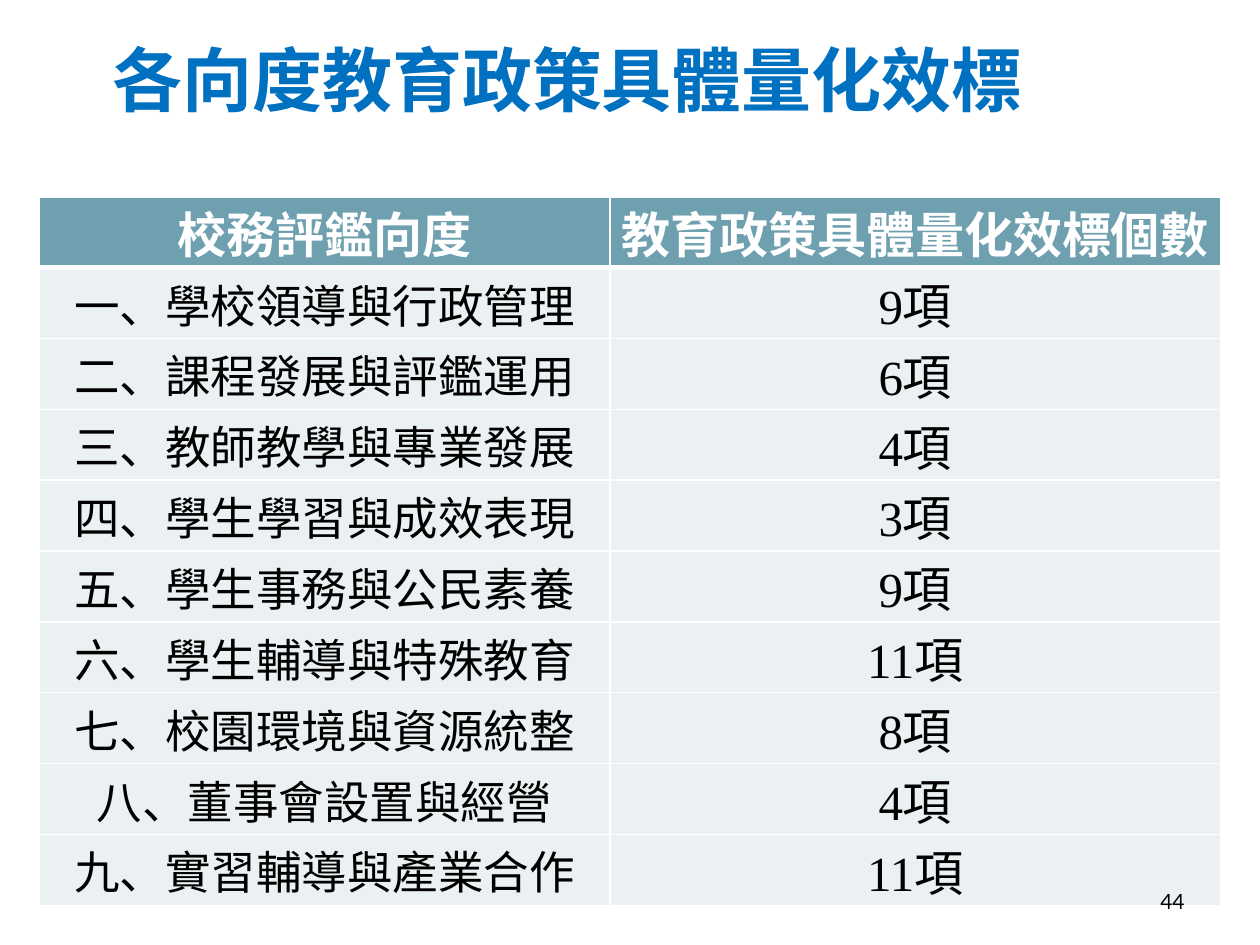
from typing import NamedTuple

from lxml.etree import fromstring
from pptx import Presentation
from pptx.dml.color import RGBColor
from pptx.enum.text import MSO_ANCHOR, PP_ALIGN
from pptx.util import Pt

NS = "http://schemas.openxmlformats.org/drawingml/2006/main"
SERIF = "Times New Roman"


class Style(NamedTuple):
    size: float
    color: str
    bold: bool = False
    font: str = SERIF
    align: PP_ALIGN = PP_ALIGN.CENTER


class Row(NamedTuple):
    name: str
    count: str


HEAD = Row("校務評鑑向度", "教育政策具體量化效標個數")
ROWS = [
    Row("一、學校領導與行政管理", "9項"),
    Row("二、課程發展與評鑑運用", "6項"),
    Row("三、教師教學與專業發展", "4項"),
    Row("四、學生學習與成效表現", "3項"),
    Row("五、學生事務與公民素養", "9項"),
    Row("六、學生輔導與特殊教育", "11項"),
    Row("七、校園環境與資源統整", "8項"),
    Row("八、董事會設置與經營", "4項"),
    Row("九、實習輔導與產業合作", "11項"),
]
HEAD_STYLE = Style(28, "FFFFFF", True)
BODY_STYLES = (Style(26, "000000"), Style(28, "000000"))


def paint(target, color: str) -> None:
    target.rgb = RGBColor.from_string(color)


def write(frame, text: str, style: Style) -> None:
    frame.text = text
    para = frame.paragraphs[0]
    para.alignment = style.align
    font = para.runs[0].font
    font.size, font.bold, font.name = Pt(style.size), style.bold, style.font
    paint(font.color, style.color)


def edge(cell, top: float, bottom: float) -> None:
    """Give a cell white borders; the sides are 1 pt wide."""
    props = cell._tc.get_or_add_tcPr()
    sides = {"L": 1, "R": 1, "T": top, "B": bottom}
    for spot, (side, width) in enumerate(sides.items()):
        props.insert(spot, fromstring(
            f'<a:ln{side} xmlns:a="{NS}" w="{Pt(width)}"><a:solidFill>'
            f'<a:srgbClr val="FFFFFF"/></a:solidFill></a:ln{side}>'))


def fill_cell(cell, text: str, style: Style, back: str) -> None:
    write(cell.text_frame, text, style)
    cell.margin_left = cell.margin_right = Pt(4.5)
    cell.margin_top = cell.margin_bottom = 0
    cell.fill.solid()
    paint(cell.fill.fore_color, back)


def add_grid(slide) -> None:
    wides, high = (326, 349), 37.3
    rows = [HEAD, *ROWS]
    grid = slide.shapes.add_table(
        len(rows), len(wides), Pt(22.5), Pt(112.5),
        Pt(sum(wides)), Pt(high * len(rows))).table
    for col, wide in zip(grid.columns, wides):
        col.width = Pt(wide)
    for i, row in enumerate(rows):
        grid.rows[i].height = Pt(high)
        for j, text in enumerate(row):
            cell = grid.cell(i, j)
            if i == 0:
                fill_cell(cell, text, HEAD_STYLE, "6EA0B0")
            else:
                fill_cell(cell, text, BODY_STYLES[j], "EBF0F2")
                cell.vertical_anchor = MSO_ANCHOR.MIDDLE
            # The line under the header is thicker
            edge(cell, 3 if i == 1 else 1, 3 if i == 0 else 1)


def main() -> None:
    deck = Presentation()
    deck.slide_width, deck.slide_height = Pt(720), Pt(540)
    slide = deck.slides.add_slide(deck.slide_layouts[5])

    # Title
    title = slide.shapes.title
    title.left, title.top, title.width, title.height = 0, 0, Pt(648), Pt(90)
    title.text_frame.vertical_anchor = MSO_ANCHOR.MIDDLE
    write(title.text_frame, "各向度教育政策具體量化效標",
          Style(40, "0070C0", True))

    # Table of indicator counts
    add_grid(slide)

    # Page number
    page = slide.shapes.add_textbox(Pt(516), Pt(500.5), Pt(168), Pt(28.8))
    page.text_frame.word_wrap = True
    page.text_frame.vertical_anchor = MSO_ANCHOR.MIDDLE
    write(page.text_frame, "44",
          Style(12, "000000", font="Lato", align=PP_ALIGN.RIGHT))

    deck.save("out.pptx")


if __name__ == "__main__":
    main()
